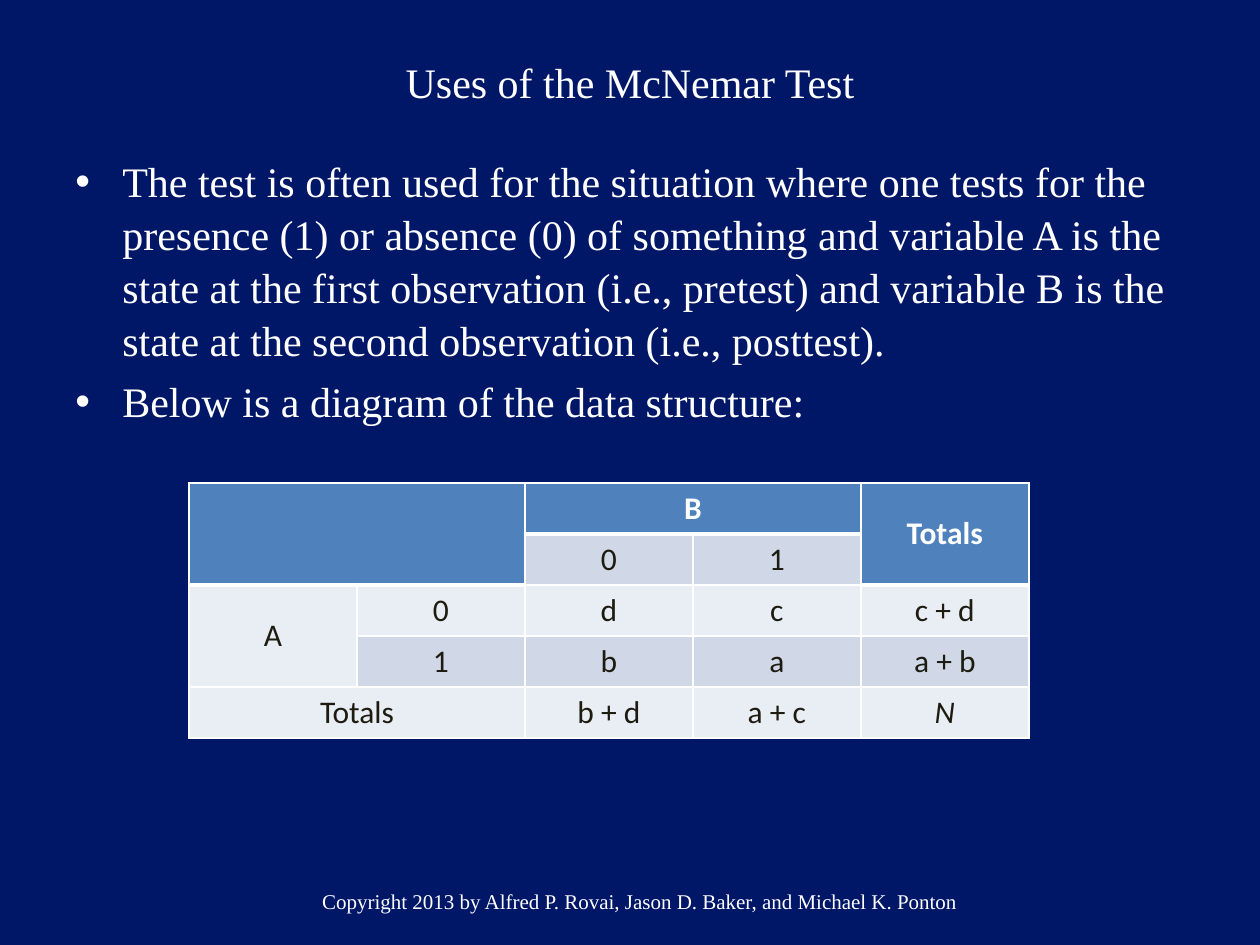
"""Build the slide on the uses of the McNemar test."""
import pptx
import pptx.util
import pptx.dml.color
import pptx.enum.text
import pptx.oxml
import pptx.oxml.ns

PX = 914400 / 126
HUES = {"back": "001667", "white": "FFFFFF", "ink": "1E1C11",
        "head": "4F81BD", "odd": "D0D8E8", "even": "E9EDF4"}
MID = pptx.enum.text.MSO_ANCHOR.MIDDLE
MAIN = pptx.oxml.ns.nsdecls("a")


def place(shape, *box):
    shape.left, shape.top, shape.width, shape.height = [round(n * PX) for n in box]


def style(par, face, size, hue, center=True):
    if center:
        par.alignment = pptx.enum.text.PP_ALIGN.CENTER
    for run in par.runs:
        run.font.name = face
        run.font.size = pptx.util.Pt(size)
        run.font.color.rgb = pptx.dml.color.RGBColor.from_string(HUES[hue])


deck = pptx.Presentation()
deck.slide_width, deck.slide_height = round(1260 * PX), round(945 * PX)
slide = deck.slides.add_slide(deck.slide_layouts[5])
slide.background.fill.solid()
slide.background.fill.fore_color.rgb = pptx.dml.color.RGBColor.from_string(HUES["back"])

title = slide.shapes.title
place(title, 63, 3, 1134, 158)
title.text_frame.text = "Uses of the McNemar Test"
title.text_frame.vertical_anchor = MID
style(title.text_frame.paragraphs[0], "Times New Roman", 24, "white")

points = [
    "The test is often used for the situation where one tests for the presence (1) "
    "or absence (0) of something and variable A is the state at the first observation "
    "(i.e., pretest) and variable B is the state at the second observation (i.e., posttest).",
    "Below is a diagram of the data structure:",
]
body = slide.shapes.add_textbox(0, 0, 0, 0)
place(body, 63, 147, 1134, 693)
body.text_frame.word_wrap = True
body.text_frame.text = "\n".join(points)
for par in body.text_frame.paragraphs:
    style(par, "Times New Roman", 24, "white", center=False)
    par.line_spacing = 1.05
    par.space_before = pptx.util.Pt(4.8)
    props = par._p.get_or_add_pPr()
    props.set("marL", str(round(47 * PX)))
    props.set("indent", str(round(-47 * PX)))
    props.append(pptx.oxml.parse_xml(f'<a:buFont {MAIN} typeface="Arial"/>'))
    props.append(pptx.oxml.parse_xml(f'<a:buChar {MAIN} char="•"/>'))

foot = slide.shapes.add_textbox(0, 0, 0, 0)
place(foot, 220, 876, 840, 50)
foot.text_frame.word_wrap = True
foot.text_frame.vertical_anchor = MID
foot.text_frame.text = "Copyright 2013 by Alfred P. Rovai, Jason D. Baker, and Michael K. Ponton"
style(foot.text_frame.paragraphs[0], "Times New Roman", 12, "white")

rows = [
    ["", "", "B", "", "Totals"],
    ["", "", "0", "1", ""],
    ["A", "0", "d", "c", "c + d"],
    ["", "1", "b", "a", "a + b"],
    ["Totals", "", "b + d", "a + c", "N"],
]
spans = [(0, 0, 1, 1), (0, 2, 0, 3), (0, 4, 1, 4), (2, 0, 3, 0), (4, 0, 4, 1)]
ends = [1, 1, 0, 0, 1]

frame = slide.shapes.add_table(5, 5, 0, 0, 0, 0)
place(frame, 189, 483, 840, 255)
grid = frame.table
for col in grid.columns:
    col.width = round(168 * PX)
for row in grid.rows:
    row.height = round(51 * PX)

for r, row in enumerate(rows):
    for c, text in enumerate(row):
        cell = grid.cell(r, c)
        head = r <= ends[c]
        cell.text_frame.text = text
        cell.vertical_anchor = MID
        par = cell.text_frame.paragraphs[0]
        style(par, "Calibri", 18, "white" if head else "ink")
        for run in par.runs:
            run.font.bold = head
            run.font.italic = text == "N"
        props = cell._tc.get_or_add_tcPr()
        wide = {"T": r - 1 == ends[c], "B": r == ends[c]}
        for side in "LRTB":
            size = pptx.util.Pt(3 if wide.get(side) else 1)
            props.append(pptx.oxml.parse_xml(
                f'<a:ln{side} {MAIN} w="{size}"><a:solidFill>'
                f'<a:srgbClr val="{HUES["white"]}"/></a:solidFill></a:ln{side}>'))
        cell.fill.solid()
        hue = "head" if head else "odd" if r % 2 else "even"
        cell.fill.fore_color.rgb = pptx.dml.color.RGBColor.from_string(HUES[hue])

for top, left, low, right in spans:
    grid.cell(top, left).merge(grid.cell(low, right))

deck.save("out.pptx")
